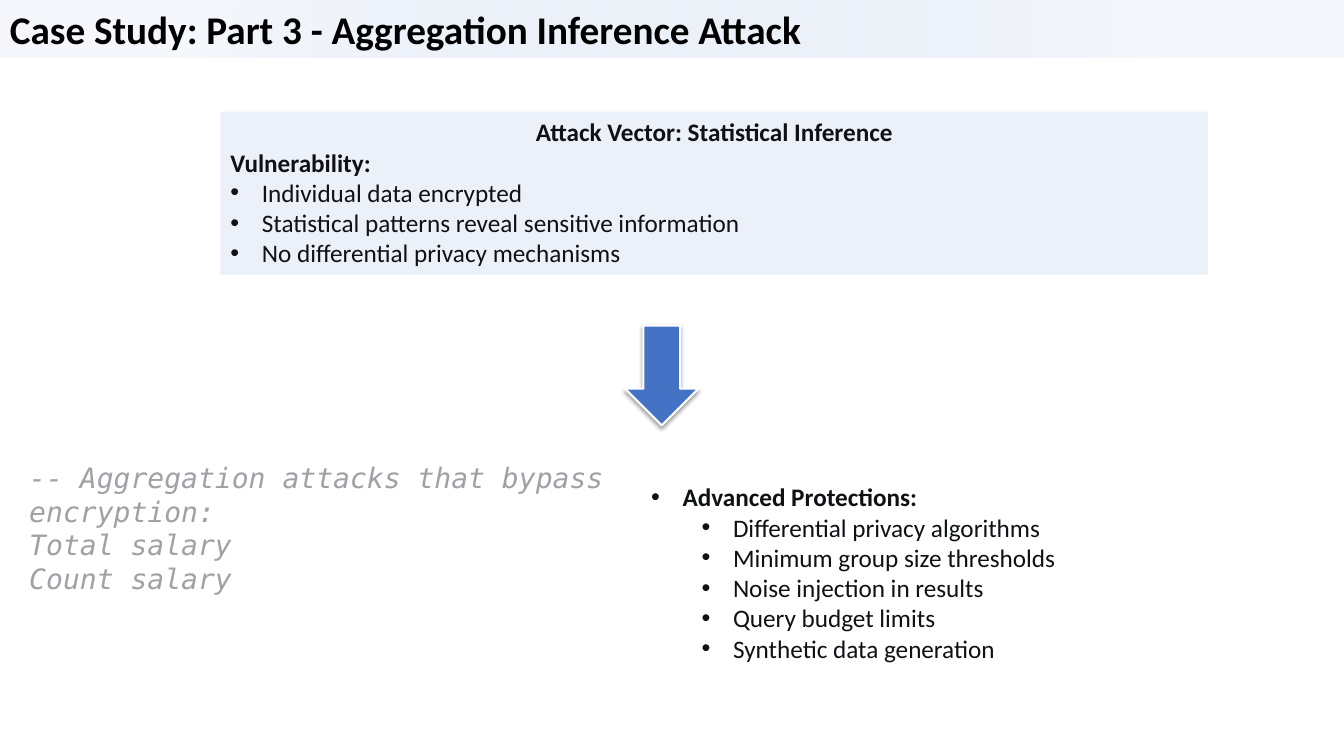
"""Build the aggregation inference attack case study slide."""
from dataclasses import dataclass

import pptx
import pptx.dml.color
import pptx.enum.shapes
import pptx.enum.text
import pptx.oxml
import pptx.oxml.ns
import pptx.shapes.autoshape
import pptx.slide
import pptx.util

Pt = pptx.util.Pt
RGBColor = pptx.dml.color.RGBColor
Align = pptx.enum.text.PP_ALIGN
Anchor = pptx.enum.text.MSO_ANCHOR
Preset = pptx.enum.shapes.MSO_SHAPE
qn = pptx.oxml.ns.qn

BLACK = RGBColor(0x00, 0x00, 0x00)
WHITE = RGBColor(0xFF, 0xFF, 0xFF)
BLUE = RGBColor(0x44, 0x72, 0xC4)
PALE_BLUE = RGBColor(0xEC, 0xF1, 0xF9)
INK = RGBColor(0x0F, 0x11, 0x15)
CODE_GRAY = RGBColor(0xA0, 0xA1, 0xA7)

DRAWING_NS = pptx.oxml.ns.nsdecls("a")
BULLET_HANG = 22.5
LEVEL_STEP = 36


@dataclass(frozen=True)
class Box:
    left: float
    top: float
    width: float
    height: float

    def lengths(self) -> tuple:
        return Pt(self.left), Pt(self.top), Pt(self.width), Pt(self.height)


@dataclass(frozen=True)
class Style:
    font: str
    size: float
    color: RGBColor
    italic: bool = False


@dataclass(frozen=True)
class Line:
    text: str
    bold: bool = False
    bullet_level: int | None = None
    align: Align = Align.LEFT


TITLE_STYLE = Style("Calibri", 28, BLACK)
BODY_STYLE = Style("Calibri", 18, INK)
CODE_STYLE = Style("DejaVu Sans Mono", 20, CODE_GRAY, italic=True)

TITLE = [Line("Case Study: Part 3 - Aggregation Inference Attack", bold=True)]
VULNERABILITY = [
    Line("Attack Vector: Statistical Inference", bold=True, align=Align.CENTER),
    Line("Vulnerability:", bold=True),
    Line("Individual data encrypted", bullet_level=0),
    Line("Statistical patterns reveal sensitive information", bullet_level=0),
    Line("No differential privacy mechanisms", bullet_level=0),
]
ATTACKS = [
    Line("-- Aggregation attacks that bypass encryption:"),
    Line("Total salary"),
    Line("Count salary"),
]
PROTECTIONS = [
    Line("Advanced Protections:", bold=True, bullet_level=0),
    Line("Differential privacy algorithms", bullet_level=1),
    Line("Minimum group size thresholds", bullet_level=1),
    Line("Noise injection in results", bullet_level=1),
    Line("Query budget limits", bullet_level=1),
    Line("Synthetic data generation", bullet_level=1),
]


def write_lines(frame: pptx.text.text.TextFrame, lines: list[Line], style: Style) -> None:
    """Fill a text frame with styled, optionally bulleted lines."""
    frame.word_wrap = True
    frame.vertical_anchor = Anchor.TOP
    for index, line in enumerate(lines):
        paragraph = frame.paragraphs[0] if index == 0 else frame.add_paragraph()
        paragraph.alignment = line.align
        if line.bullet_level is not None:
            paragraph.level = line.bullet_level
            properties = paragraph._p.get_or_add_pPr()
            properties.set("marL", str(Pt(BULLET_HANG + LEVEL_STEP * line.bullet_level)))
            properties.set("indent", str(-Pt(BULLET_HANG)))
            properties.append(pptx.oxml.parse_xml(f'<a:buFont {DRAWING_NS} typeface="Arial"/>'))
            properties.append(pptx.oxml.parse_xml(f'<a:buChar {DRAWING_NS} char="•"/>'))
        run = paragraph.add_run()
        run.text = line.text
        run.font.name = style.font
        run.font.size = Pt(style.size)
        run.font.color.rgb = style.color
        run.font.bold = line.bold
        run.font.italic = style.italic


def add_panel(slide: pptx.slide.Slide, box: Box, lines: list[Line],
              style: Style) -> pptx.shapes.autoshape.Shape:
    """Add a borderless pale rectangle holding text."""
    panel = slide.shapes.add_shape(Preset.RECTANGLE, *box.lengths())
    panel.shadow.inherit = False
    panel.fill.solid()
    panel.fill.fore_color.rgb = PALE_BLUE
    panel.line.fill.background()
    write_lines(panel.text_frame, lines, style)
    return panel


def add_text(slide: pptx.slide.Slide, box: Box, lines: list[Line],
             style: Style) -> pptx.shapes.autoshape.Shape:
    """Add a plain text box."""
    text_box = slide.shapes.add_textbox(*box.lengths())
    write_lines(text_box.text_frame, lines, style)
    return text_box


def tint_radially(banner: pptx.shapes.autoshape.Shape) -> None:
    """Give the banner a translucent circular gradient."""
    banner.fill.gradient()
    for stop, position, opacity in zip(banner.fill.gradient_stops, (0.26, 0.76), (10, 5)):
        stop.position = position
        stop.color.rgb = BLUE
    gradient = banner._element.spPr.find(qn("a:gradFill"))
    for color, opacity in zip(gradient.iter(qn("a:srgbClr")), (10, 5)):
        color.append(pptx.oxml.parse_xml(f'<a:alpha {DRAWING_NS} val="{opacity * 1000}"/>'))
    circle = pptx.oxml.parse_xml(
        f'<a:path {DRAWING_NS} path="circle"><a:fillToRect l="0" t="0" r="0" b="0"/></a:path>')
    gradient.replace(gradient.find(qn("a:lin")), circle)


def add_down_arrow(slide: pptx.slide.Slide, box: Box) -> None:
    """Add the blue arrow with a white outline and a soft shadow."""
    arrow = slide.shapes.add_shape(Preset.DOWN_ARROW, *box.lengths())
    arrow.fill.solid()
    arrow.fill.fore_color.rgb = BLUE
    arrow.line.color.rgb = WHITE
    arrow.line.width = Pt(1.5)
    arrow.shadow.inherit = False
    arrow._element.spPr.find(qn("a:effectLst")).append(pptx.oxml.parse_xml(
        f'<a:outerShdw {DRAWING_NS} blurRad="{Pt(3.1)}" dist="{Pt(1.6)}" dir="5400000" '
        f'rotWithShape="0"><a:srgbClr val="{BLACK}"><a:alpha val="38000"/></a:srgbClr>'
        '</a:outerShdw>'))


def main() -> None:
    """Assemble and save the slide."""
    deck = pptx.Presentation()
    deck.slide_width, deck.slide_height = Pt(960), Pt(540)
    slide = deck.slides.add_slide(deck.slide_layouts[6])

    banner = add_panel(slide, Box(0, 0, 960, 41.2), TITLE, TITLE_STYLE)
    tint_radially(banner)
    add_panel(slide, Box(157.5, 79.8, 705.6, 116.4), VULNERABILITY, BODY_STYLE)

    attacks = add_text(slide, Box(20.9, 340.5, 425.5, 97.2), ATTACKS, CODE_STYLE).text_frame
    attacks.vertical_anchor = Anchor.MIDDLE
    attacks.margin_left = attacks.margin_right = attacks.margin_top = 0
    attacks.margin_bottom = Pt(24)

    add_text(slide, Box(458, 340.5, 480, 138), PROTECTIONS, BODY_STYLE)
    add_down_arrow(slide, Box(446.4, 232.6, 52.6, 71.3))
    deck.save("out.pptx")


if __name__ == "__main__":
    main()
